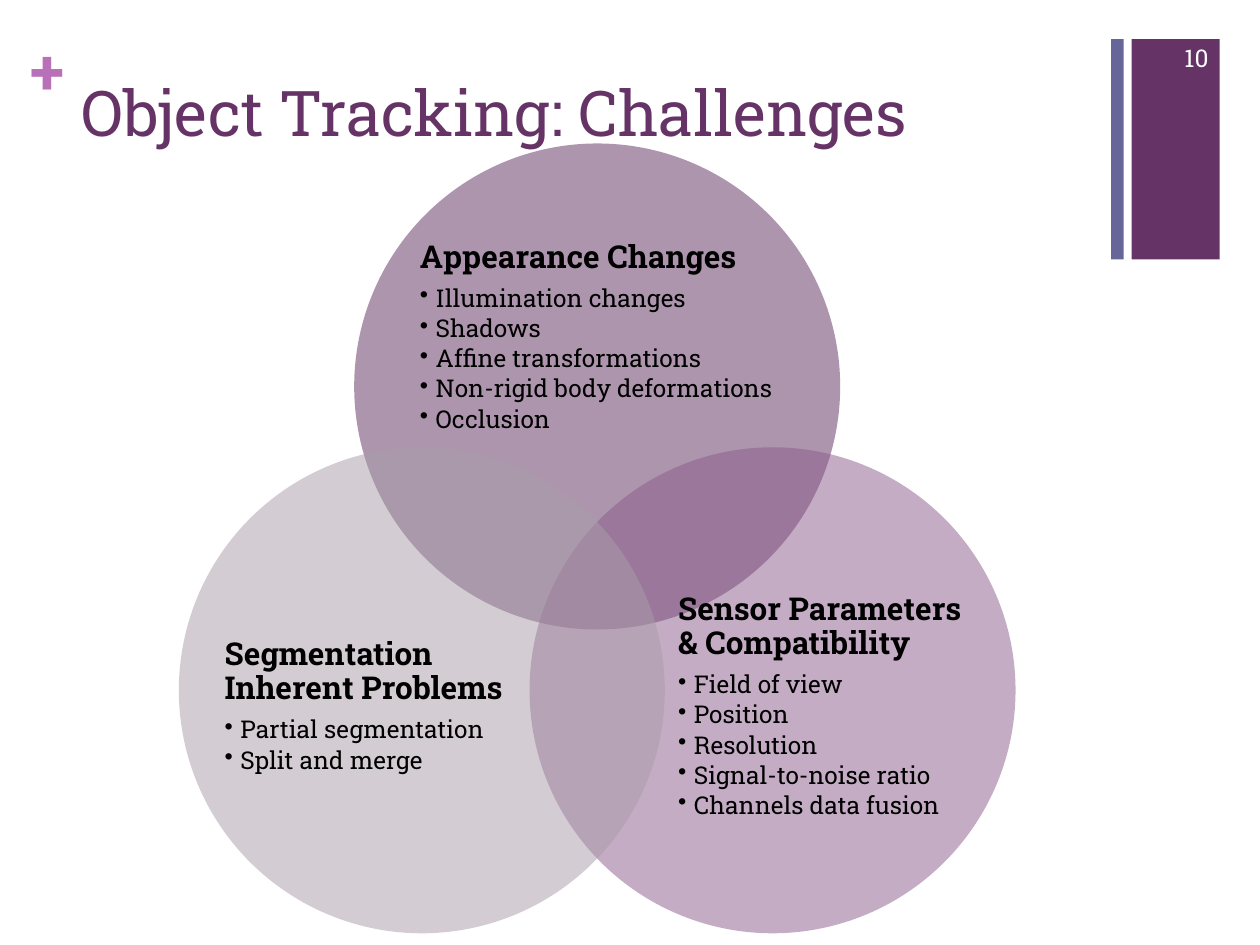
from dataclasses import dataclass

from lxml.etree import SubElement
from pptx import Presentation
from pptx.dml.color import RGBColor
from pptx.enum.shapes import MSO_SHAPE
from pptx.enum.text import MSO_ANCHOR, MSO_AUTO_SIZE, PP_ALIGN
from pptx.oxml.ns import qn
from pptx.shapes.autoshape import Shape
from pptx.slide import Slide
from pptx.text.text import TextFrame, _Paragraph
from pptx.util import Pt

FONT_NAME = "Roboto Slab"
COLORS = {
    "purple": "663366",
    "slate": "666699",
    "orchid": "B870B8",
    "appearance": "5D2E5D",
    "sensor": "8B5C8B",
    "segmentation": "A99CA9",
    "black": "000000",
    "white": "FFFFFF",
}
CIRCLE_DIAMETER = 277.7
BULLET_INDENT = 9


@dataclass(frozen=True)
class Box:
    left: float
    top: float
    width: float
    height: float

    def lengths(self) -> tuple[Pt, Pt, Pt, Pt]:
        return Pt(self.left), Pt(self.top), Pt(self.width), Pt(self.height)


@dataclass(frozen=True)
class Challenge:
    left: float
    top: float
    color: str
    text_box: Box
    heading: str
    items: tuple[str, ...]


CHALLENGES = (
    Challenge(
        202.4, 82, "appearance", Box(240, 130.3, 203.7, 125),
        "Appearance Changes",
        ("Illumination changes", "Shadows", "Affine transformations",
         "Non-rigid body deformations", "Occlusion"),
    ),
    Challenge(
        302.6, 255.6, "sensor", Box(387.5, 327.4, 166.6, 152.7),
        "Sensor Parameters & Compatibility",
        ("Field of view", "Position", "Resolution",
         "Signal-to-noise ratio", "Channels data fusion"),
    ),
    Challenge(
        102.2, 255.6, "segmentation", Box(128.4, 327.4, 166.6, 152.7),
        "Segmentation Inherent Problems",
        ("Partial segmentation", "Split and merge"),
    ),
)


def add_filled_shape(slide: Slide, preset: MSO_SHAPE, box: Box, color: str) -> Shape:
    shape = slide.shapes.add_shape(preset, *box.lengths())
    shape.shadow.inherit = False
    shape.fill.solid()
    shape.fill.fore_color.rgb = RGBColor.from_string(COLORS[color])
    shape.line.fill.background()
    return shape


def set_opacity(shape: Shape, percent: int) -> None:
    color = shape._element.spPr.find(qn("a:solidFill")).find(qn("a:srgbClr"))
    SubElement(color, qn("a:alpha")).set("val", str(percent * 1000))


def add_text_box(slide: Slide, box: Box, margin: bool = False) -> TextFrame:
    text_frame = slide.shapes.add_textbox(*box.lengths()).text_frame
    text_frame.word_wrap = True
    if not margin:
        text_frame.margin_left = text_frame.margin_right = Pt(0)
        text_frame.margin_top = text_frame.margin_bottom = Pt(0)
    return text_frame


def format_font(paragraph: _Paragraph, size: float, color: str, bold: bool = False) -> None:
    font = paragraph.font
    font.name = FONT_NAME
    font.size = Pt(size)
    font.bold = bold
    font.color.rgb = RGBColor.from_string(COLORS[color])


def add_bullet(paragraph: _Paragraph) -> None:
    properties = paragraph._p.get_or_add_pPr()
    properties.set("marL", str(Pt(BULLET_INDENT)))
    properties.set("indent", str(-Pt(BULLET_INDENT)))
    SubElement(properties, qn("a:buChar")).set("char", "•")


def add_challenge(slide: Slide, challenge: Challenge) -> None:
    circle_box = Box(challenge.left, challenge.top, CIRCLE_DIAMETER, CIRCLE_DIAMETER)
    circle = add_filled_shape(slide, MSO_SHAPE.OVAL, circle_box, challenge.color)
    set_opacity(circle, 50)

    text_frame = add_text_box(slide, challenge.text_box)
    text_frame.vertical_anchor = MSO_ANCHOR.MIDDLE
    heading = text_frame.paragraphs[0]
    heading.text = challenge.heading
    heading.line_spacing = 0.9
    heading.space_after = Pt(6.3)
    format_font(heading, 18, "black", bold=True)
    for item in challenge.items:
        paragraph = text_frame.add_paragraph()
        paragraph.text = item
        paragraph.level = 1
        paragraph.line_spacing = 0.9
        paragraph.space_after = Pt(2.1)
        add_bullet(paragraph)
        format_font(paragraph, 14, "black")


def add_title(slide: Slide, text: str) -> None:
    title = slide.shapes.title
    title.left, title.top, title.width, title.height = Box(39.6, 38.2, 594.7, 87.8).lengths()
    text_frame = title.text_frame
    text_frame.text = text
    text_frame.auto_size = MSO_AUTO_SIZE.NONE
    text_frame.vertical_anchor = MSO_ANCHOR.TOP
    paragraph = text_frame.paragraphs[0]
    paragraph.alignment = PP_ALIGN.LEFT
    format_font(paragraph, 36, "purple")


def add_decoration(slide: Slide) -> None:
    add_filled_shape(slide, MSO_SHAPE.RECTANGLE, Box(646.6, 22.3, 50.4, 126), "purple")
    add_filled_shape(slide, MSO_SHAPE.RECTANGLE, Box(635, 22.3, 7.2, 126), "slate")
    plus = add_text_box(slide, Box(17.3, 18, 20.9, 43.9))
    plus.word_wrap = False
    plus.text = "+"
    format_font(plus.paragraphs[0], 36, "orchid", bold=True)


def add_slide_number(slide: Slide, number: str) -> None:
    text_frame = add_text_box(slide, Box(653.8, 18.7, 43.9, 28.8), margin=True)
    text_frame.vertical_anchor = MSO_ANCHOR.MIDDLE
    text_frame.text = number
    paragraph = text_frame.paragraphs[0]
    paragraph.alignment = PP_ALIGN.RIGHT
    format_font(paragraph, 14, "white")


def main() -> None:
    presentation = Presentation()
    presentation.slide_width, presentation.slide_height = Pt(720), Pt(540)
    slide = presentation.slides.add_slide(presentation.slide_layouts[5])
    add_decoration(slide)
    add_title(slide, "Object Tracking: Challenges")
    for challenge in CHALLENGES:
        add_challenge(slide, challenge)
    add_slide_number(slide, "10")
    presentation.save("out.pptx")


if __name__ == "__main__":
    main()
